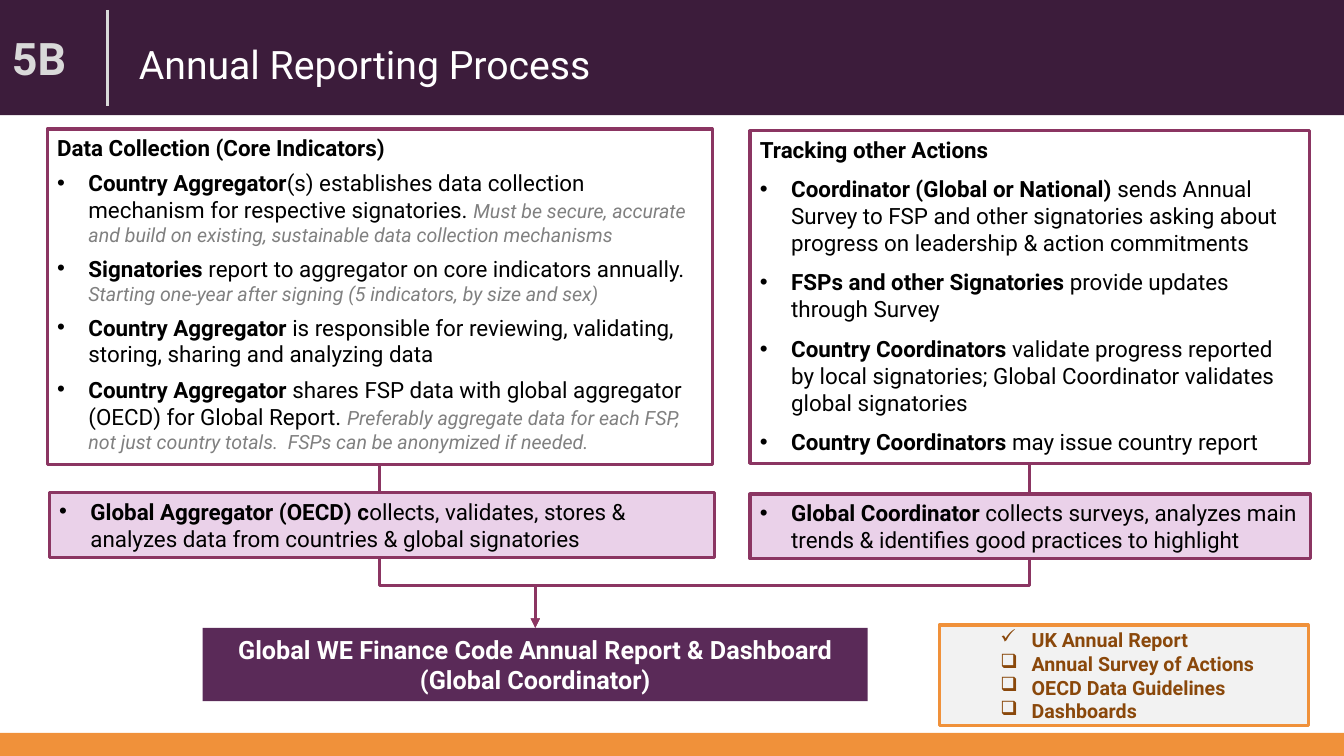
from dataclasses import dataclass
from typing import Any, NamedTuple, Optional

from lxml import etree
from pptx import Presentation
from pptx.dml.color import RGBColor
from pptx.enum.dml import MSO_LINE
from pptx.enum.shapes import MSO_CONNECTOR, MSO_SHAPE
from pptx.enum.text import MSO_ANCHOR, MSO_AUTO_SIZE, PP_ALIGN
from pptx.oxml.ns import qn
from pptx.util import Cm, Pt

RECT = MSO_SHAPE.RECTANGLE
STRAIGHT, ELBOW = MSO_CONNECTOR.STRAIGHT, MSO_CONNECTOR.ELBOW
SOLID = MSO_LINE.SOLID
TOP, MIDDLE = MSO_ANCHOR.TOP, MSO_ANCHOR.MIDDLE
LEFT, CENTER = PP_ALIGN.LEFT, PP_ALIGN.CENTER
GROW, FIXED = MSO_AUTO_SIZE.SHAPE_TO_FIT_TEXT, MSO_AUTO_SIZE.NONE

ORANGE = RGBColor(0xF0, 0x91, 0x3A)
BROWN = RGBColor(0x8A, 0x48, 0x0B)
DARK = RGBColor(0x3C, 0x1C, 0x3B)
PURPLE = RGBColor(0x5A, 0x2A, 0x58)
PLUM = RGBColor(0x8B, 0x35, 0x62)
PINK = RGBColor(0xEA, 0xD1, 0xE9)
PALE = RGBColor(0xF2, 0xF2, 0xF2)
SILVER = RGBColor(0xD9, 0xD9, 0xD9)
GRAY = RGBColor(0x80, 0x80, 0x80)
BLACK = RGBColor(0, 0, 0)
WHITE = RGBColor(0xFF, 0xFF, 0xFF)

FONT = "Roboto"
STROKE = Pt(2.25)
HANG = Cm(0.79)
JOIN = Cm(14.76)  # height at which both branches meet


class Style(NamedTuple):
    size: float
    color: RGBColor
    bold: bool = False
    italic: bool = False


BOLD = Style(16, BLACK, bold=True)
BODY = Style(16, BLACK)
NOTE = Style(14, GRAY, italic=True)
CHECK = Style(14, BROWN, bold=True)
REPORT = Style(18, WHITE, bold=True)
TITLE = Style(28, WHITE)
CODE = Style(32, SILVER, bold=True)


class Para(NamedTuple):
    runs: list[tuple[str, Style]]
    bullet: str = ""
    indent: float = 0.79


@dataclass
class Box:
    left: float
    top: float
    width: float
    height: float
    paras: list[Para]
    fill: Optional[RGBColor] = None
    line: Optional[RGBColor] = None
    before: float = 0
    after: float = 0
    align: Any = LEFT
    anchor: Any = TOP
    fit: Any = GROW
    spacing: float = 1.0


BAND = Box(0, 0, 33.87, 2.9, [], DARK, fit=FIXED)
FOOT = Box(0, 18.47, 33.87, 0.58, [], ORANGE, fit=FIXED)
HEAD = Box(2.95, 0.03, 30.9, 2.9,
           [Para([("Annual Reporting Process", TITLE)], indent=0.3)],
           anchor=MIDDLE, fit=FIXED, spacing=1.2)
LABEL = Box(0.05, 0.66, 4.72, 1.63, [Para([("5B", CODE)])])

DATA = Box(1.19, 3.25, 16.76, 8.46, [
    Para([("Data Collection (Core Indicators)", BOLD)]),
    Para([("Country Aggregator", BOLD),
          ("(s) establishes data collection mechanism for respective signatories. ", BODY),
          ("Must be secure, accurate and build on existing, sustainable data "
           "collection mechanisms", NOTE)], "•"),
    Para([("Signatories", BOLD),
          (" report to aggregator on core indicators annually. ", BODY),
          ("Starting one-year after signing (5 indicators, by size and sex)", NOTE)], "•"),
    Para([("Country Aggregator", BOLD),
          (" is responsible for reviewing, validating, storing, sharing and "
           "analyzing data", BODY)], "•"),
    Para([("Country Aggregator", BOLD),
          (" shares FSP data with global aggregator (OECD) for Global Report. ", BODY),
          ("Preferably aggregate data for each FSP, not just country totals.  "
           "FSPs can be anonymized if needed.", NOTE)], "•"),
], line=PLUM, after=6)

TRACK = Box(18.9, 3.3, 14.1, 8.38, [
    Para([("Tracking other Actions", BOLD)]),
    Para([("Coordinator (Global or National) ", BOLD),
          ("sends Annual Survey to FSP and other signatories asking about "
           "progress on leadership & action commitments", BODY)], "•"),
    Para([("FSPs and other Signatories ", BOLD),
          ("provide updates through Survey", BODY)], "•"),
    Para([("Country Coordinators ", BOLD),
          ("validate progress reported by local signatories; Global "
           "Coordinator validates global signatories", BODY)], "•"),
    Para([("Country Coordinators ", BOLD), ("may issue country report", BODY)], "•"),
], line=PLUM, before=9)

RESULT = Box(5.11, 15.82, 16.76, 1.85, [
    Para([("Global WE Finance Code Annual Report & Dashboard", REPORT)]),
    Para([("(Global Coordinator)", REPORT)]),
], PURPLE, align=CENTER, anchor=MIDDLE, fit=FIXED)

TRENDS = Box(18.9, 12.45, 14.12, 1.63, [
    Para([("Global Coordinator ", BOLD),
          ("collects surveys, analyzes main trends & identifies good "
           "practices to highlight", BODY)], "•"),
], PINK, PLUM, before=12)

TOTALS = Box(1.24, 12.42, 16.76, 1.63, [
    Para([("Global Aggregator (OECD) c", BOLD),
          ("ollects, validates, stores & analyzes data from countries & "
           "global signatories", BODY)], "•"),
], PINK, PLUM, after=6)

TASKS = [("✓", "UK Annual Report"), ("❑", "Annual Survey of Actions"),
         ("❑", "OECD Data Guidelines"), ("❑", "Dashboards")]
STATUS = Box(23.67, 15.75, 9.3, 2.54,
             [Para([(task, CHECK)], mark, 2.08) for mark, task in TASKS],
             PALE, ORANGE, anchor=MIDDLE, fit=FIXED)


def assign(target: Any, values: dict[str, Any]) -> None:
    for name, value in values.items():
        setattr(target, name, value)


def write(frame: Any, box: Box) -> None:
    assign(frame, {"word_wrap": True, "auto_size": box.fit, "vertical_anchor": box.anchor})
    for i, para in enumerate(box.paras):
        p = frame.add_paragraph() if i else frame.paragraphs[0]
        assign(p, {"alignment": box.align, "line_spacing": box.spacing,
                   "space_before": Pt(box.before), "space_after": Pt(box.after)})
        props = p._p.get_or_add_pPr()
        if para.bullet:
            props.set("marL", str(Cm(para.indent)))
            props.set("indent", str(-HANG))
            if para.bullet == "•":
                etree.SubElement(props, qn("a:buFont")).set("typeface", "Arial")
            etree.SubElement(props, qn("a:buChar")).set("char", para.bullet)
        elif para.indent != 0.79:
            props.set("marL", str(Cm(para.indent)))
        for text, style in para.runs:
            run = p.add_run()
            run.text = text
            assign(run.font, {"name": FONT, "size": Pt(style.size),
                              "bold": style.bold, "italic": style.italic})
            run.font.color.rgb = style.color


def draw(shapes: Any, box: Box) -> Any:
    """Add a box; one with neither fill nor line becomes a text box."""
    place = [Cm(n) for n in (box.left, box.top, box.width, box.height)]
    if box.fill is None and box.line is None:
        shape = shapes.add_textbox(*place)
    else:
        shape = shapes.add_shape(RECT, *place)
        shape.shadow.inherit = False
        for part, color in ((shape.fill, box.fill), (shape.line.fill, box.line)):
            if color is None:
                part.background()
            else:
                part.solid()
                part.fore_color.rgb = color
        if box.line is not None:
            shape.line.width = STROKE
    if box.paras:
        write(shape.text_frame, box)
    return shape


def finish(line: Any, color: RGBColor) -> None:
    line.line.color.rgb = color
    assign(line.line, {"width": STROKE, "dash_style": SOLID})
    etree.SubElement(line._element.spPr, qn("a:effectLst"))


def branch(shapes: Any, source: Any, target: Any) -> None:
    """Lead an arrow down from source, across at JOIN, and down to target."""
    x1, y1 = source.left + source.width // 2, source.top + source.height
    x2, y2 = target.left + target.width // 2, target.top
    wide, high = abs(x2 - x1), y2 - y1
    line = shapes.add_connector(ELBOW, x1, y1, x2, y2)
    line.begin_connect(source, 2)
    line.end_connect(target, 0)
    assign(line, {"left": (x1 + x2 - high) // 2, "top": (y1 + y2 - wide) // 2,
                  "width": high, "height": wide})
    props = line._element.spPr
    frame = props.find(qn("a:xfrm"))
    frame.attrib.pop("flipH", None)
    frame.set("rot", "16200000" if x2 > x1 else "5400000")
    if x2 > x1:
        frame.set("flipH", "1")
    guide = etree.SubElement(props.find(qn("a:prstGeom")).find(qn("a:avLst")), qn("a:gd"))
    guide.set("name", "adj1")
    guide.set("fmla", f"val {round((JOIN - y1) / high * 100000)}")
    finish(line, PLUM)
    etree.SubElement(props.find(qn("a:ln")), qn("a:tailEnd")).set("type", "triangle")


def main() -> None:
    deck = Presentation()
    assign(deck, {"slide_width": Cm(33.87), "slide_height": Cm(19.05)})
    shapes = deck.slides.add_slide(deck.slide_layouts[6]).shapes
    for box in (FOOT, BAND, HEAD):
        draw(shapes, box)
    rule = shapes.add_connector(STRAIGHT, Cm(2.72), Cm(0.25), Cm(2.72), Cm(2.67))
    finish(rule, SILVER)
    draw(shapes, LABEL)
    data, track, result = [draw(shapes, box) for box in (DATA, TRACK, RESULT)]
    for source in (data, track):
        branch(shapes, source, result)
    for box in (TRENDS, TOTALS, STATUS):
        draw(shapes, box)
    deck.save("out.pptx")


if __name__ == "__main__":
    main()
